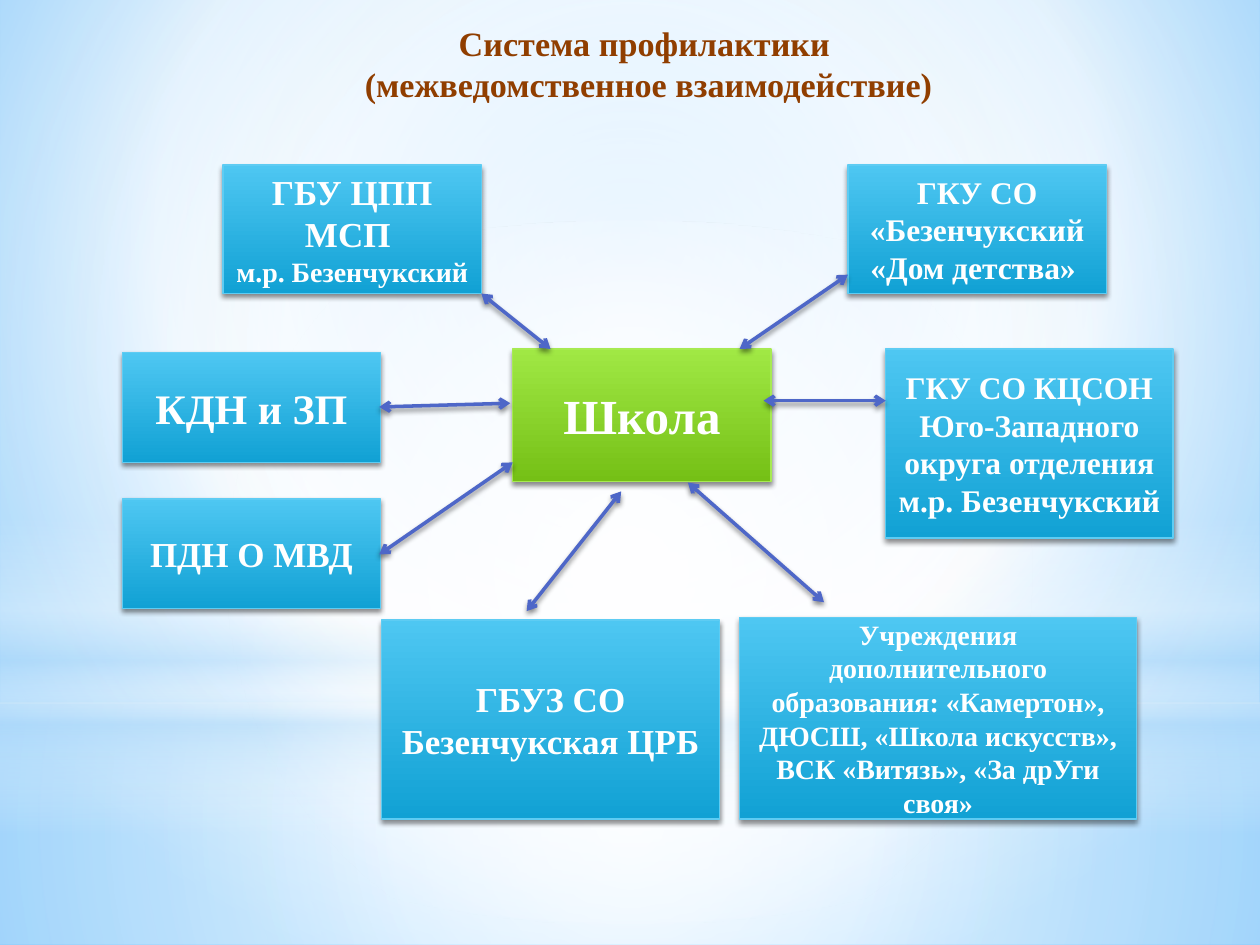
from lxml.etree import SubElement as Sub
from pptx import Presentation
from pptx.dml.color import RGBColor as Rgb
from pptx.enum.shapes import MSO_CONNECTOR as Conn, MSO_SHAPE as Form
from pptx.enum.text import MSO_ANCHOR as Anchor, PP_ALIGN as Align
from pptx.oxml.ns import qn
from pptx.util import Inches, Pt

FONT = "Times New Roman"
HUES = {
    "white": "FFFFFF", "title": "903E00", "arrow": "4E67C8", "black": "000000",
    "blue_top": "4EC7F2", "blue_end": "11A1D4", "blue_edge": "5ECCF3",
    "green_top": "A0E844", "green_end": "75C016", "green_edge": "A7EA52",
    "sky": "9ED5FF", "deep": "5BB9FF", "mist": "B4DCFA",
}
MID = (50, 50, 50, 50)
LAYERS = [
    (Form.RECTANGLE, (0, 5.58, 10, 1.92),
     [(0, "white", 91), (37, "white", 76), (100, "mist", 79)], MID),
    (Form.RECTANGLE, (0, 0, 10, 5.58),
     [(0, "white", 89), (48, "white", 62), (100, "mist", 79)], MID),
    (Form.RECTANGLE, (0, 4.12, 10, 2.5),
     [(0, "white", 0), (29, "white", 30), (45, "mist", 40),
      (55, "white", 26), (65, "mist", 60), (100, "white", 0)], None),
    (Form.OVAL, (0, 1.75, 10, 5.58),
     [(0, "white", 100), (56, "white", 0)], MID),
]
BOXES = [
    ((4.07, 2.77, 2.05, 1.05), "green", [("Школа", 28)]),
    ((0.97, 2.8, 2.05, 0.87), "blue", [("КДН и ЗП", 24)]),
    ((0.97, 3.96, 2.05, 0.87), "blue", [("ПДН О МВД", 20)]),
    ((1.77, 1.31, 2.05, 1.02), "blue",
     [("ГБУ ЦПП МСП ", 20), ("м.р. Безенчукский ", 16)]),
    ((7.03, 2.77, 2.28, 1.5), "blue",
     [("ГКУ СО КЦСОН Юго-Западного округа отделения м.р. Безенчукский ", 18)]),
    ((6.73, 1.31, 2.05, 1.02), "blue",
     [("ГКУ СО «Безенчукский «Дом детства» ", 18)]),
    ((5.87, 4.9, 3.15, 1.6), "blue",
     [("Учреждения дополнительного образования: «Камертон», ДЮСШ, "
       "«Школа искусств», ВСК «Витязь», «За дрУги своя»", 16)]),
    ((3.03, 4.92, 2.68, 1.58), "blue", [("ГБУЗ СО Безенчукская ЦРБ", 20)]),
]
ARROWS = [
    (5.87, 2.77, 6.73, 2.18), (4.37, 2.77, 3.82, 2.33),
    (3.01, 3.23, 4.05, 3.2), (3.01, 4.4, 4.07, 3.67),
    (6.06, 3.18, 7.03, 3.18), (4.18, 4.85, 4.93, 3.9),
    (6.54, 4.78, 5.46, 3.83),
]


def tint(node, hue, alpha):
    color = Sub(node, qn("a:srgbClr"), val=HUES[hue])
    if alpha < 100:
        Sub(color, qn("a:alpha"), val=str(alpha * 1000))


def blend(fill, node, stops, focus=None):
    fill.solid()
    solid = node.find(qn("a:solidFill"))
    grad = node.makeelement(qn("a:gradFill"), {"rotWithShape": "1"})
    node.replace(solid, grad)
    chain = Sub(grad, qn("a:gsLst"))
    for pos, hue, alpha in stops:
        tint(Sub(chain, qn("a:gs"), pos=str(pos * 1000)), hue, alpha)
    if focus:
        ring = Sub(grad, qn("a:path"), path="circle")
        sides = {side: str(part * 1000) for side, part in zip("ltrb", focus)}
        Sub(ring, qn("a:fillToRect"), sides)
    else:
        Sub(grad, qn("a:lin"), ang="5400000", scaled="0")


def shade(node):
    effect = node.find(qn("a:effectLst"))
    if effect is None:
        effect = Sub(node, qn("a:effectLst"))
    drop = Sub(effect, qn("a:outerShdw"), blurRad=str(Pt(3.1)),
               dist=str(Pt(1.8)), dir="5400000", rotWithShape="0")
    tint(drop, "black", 45)


def write(frame, lines, hue):
    frame.word_wrap = True
    for i, (text, size) in enumerate(lines):
        para = frame.add_paragraph() if i else frame.paragraphs[0]
        para.text = text
        para.alignment = Align.CENTER
        font = para.font
        font.name, font.size, font.bold = FONT, Pt(size), True
        font.color.rgb = Rgb.from_string(HUES[hue])


def add_form(slide, form, place, stops, focus=None):
    shape = slide.shapes.add_shape(form, *map(Inches, place))
    shape.shadow.inherit = False
    blend(shape.fill, shape.element.spPr, stops, focus)
    shape.line.fill.background()
    return shape


def add_box(slide, place, tone, lines):
    stops = [(0, tone + "_top", 100), (100, tone + "_end", 100)]
    box = add_form(slide, Form.RECTANGLE, place, stops)
    box.line.color.rgb = Rgb.from_string(HUES[tone + "_edge"])
    box.line.width = Pt(0.75)
    shade(box.element.spPr)
    box.text_frame.vertical_anchor = Anchor.MIDDLE
    write(box.text_frame, lines, "white")


def add_arrow(slide, ends):
    arrow = slide.shapes.add_connector(Conn.STRAIGHT, *map(Inches, ends))
    arrow.line.color.rgb = Rgb.from_string(HUES["arrow"])
    arrow.line.width = Pt(2)
    node = arrow.element.spPr
    for tip in ("a:headEnd", "a:tailEnd"):
        Sub(node.find(qn("a:ln")), qn(tip), type="arrow")
    shade(node)


def add_title(slide):
    title = slide.shapes.add_textbox(*map(Inches, (0.3, 0.13, 9.7, 0.99)))
    text = "Система профилактики \n(межведомственное взаимодействие)"
    write(title.text_frame, [(text, 19.5)], "title")


def add_back(slide):
    fill = slide.background.fill
    fill.solid()
    node = slide.element.find(".//" + qn("p:bgPr"))
    stops = [(0, "sky", 100), (60, "white", 100), (100, "deep", 100)]
    blend(fill, node, stops, (20, 10, 20, 60))


def main():
    deck = Presentation()
    deck.slide_width, deck.slide_height = Inches(10), Inches(7.5)
    slide = deck.slides.add_slide(deck.slide_layouts[6])
    add_back(slide)
    for layer in LAYERS:
        add_form(slide, *layer)
    for box in BOXES:
        add_box(slide, *box)
    for ends in ARROWS:
        add_arrow(slide, ends)
    add_title(slide)
    deck.save("out.pptx")


if __name__ == "__main__":
    main()
